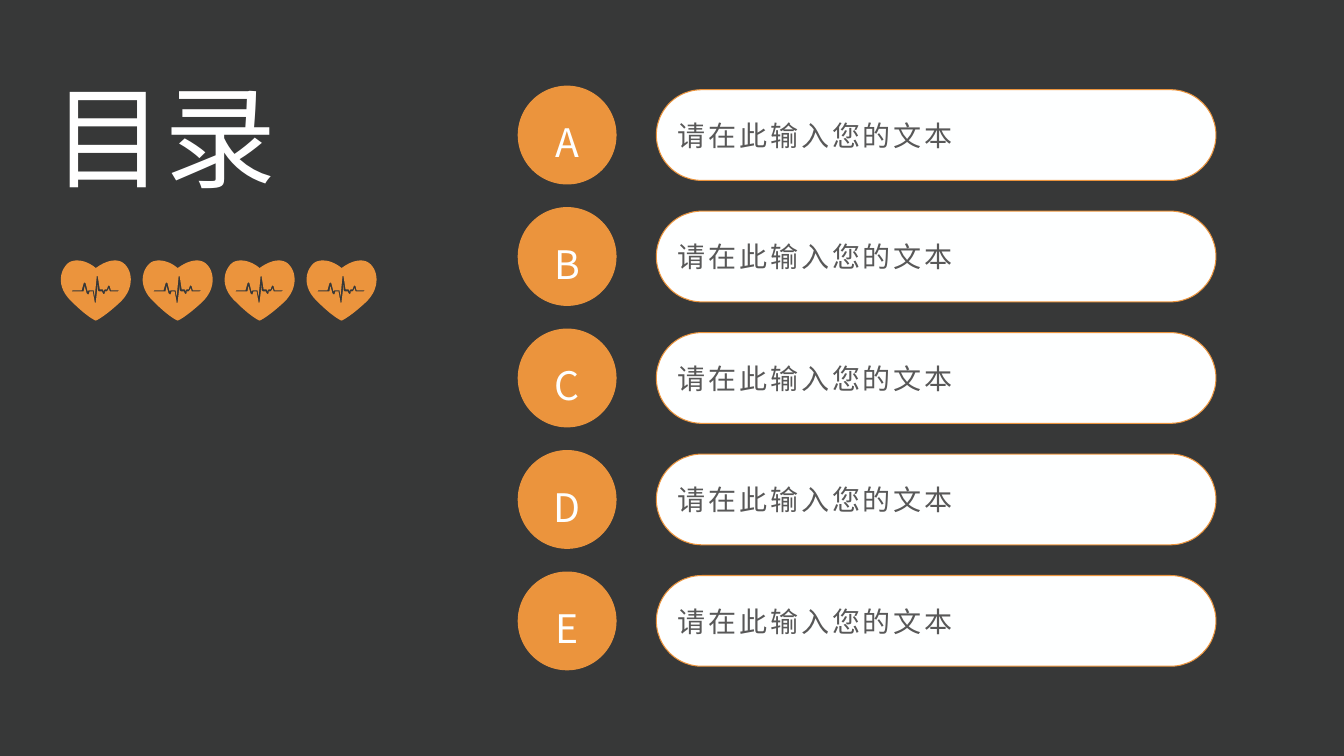
"""Contents slide: a title with a row of heartbeat icons beside five lettered entries."""
from dataclasses import dataclass

from lxml.etree import SubElement
from pptx import Presentation
from pptx.dml.color import RGBColor
from pptx.enum.shapes import MSO_SHAPE as SHAPE
from pptx.enum.text import MSO_ANCHOR as ANCHOR, MSO_AUTO_SIZE as AUTO, PP_ALIGN as ALIGN
from pptx.oxml.ns import qn
from pptx.util import Pt

TITLE = "目录"
ENTRIES = [(letter, "请在此输入您的文本") for letter in "ABCDE"]

PX = 9144
SLIDE = (1333, 750)
TITLE_BOX = (42, 61, 346, 145)
PILL = dict(x=651, y=89, w=555, h=90)
BADGE = dict(x=514, d=97)
ROW_PITCH = 120.5
HEARTS = dict(x=54, y=255, pitch=81.25, count=4)

HEART_START = (15, 5)
HEART_CURVES = [
    ((26, 0), (38, 8), (41, 11)),
    ((45, 8), (57, 0), (67, 5)),
    ((77, 11), (81, 30), (65, 45)),
    ((51, 58), (42, 63), (41, 63)),
    ((40, 63), (31, 58), (18, 45)),
    ((0, 29), (6, 11), (15, 5)),
]
PULSE = [
    (18, 34), (29, 34), (30, 29), (32, 36), (33, 37), (34, 37), (35, 34), (38, 34),
    (40, 45), (40, 46), (41, 45), (43, 28), (43, 33), (44, 34), (47, 34), (48, 36),
    (49, 37), (50, 36), (50, 34), (52, 34), (53, 33), (54, 31), (55, 34), (63, 34),
    (65, 33), (56, 33), (55, 29), (54, 28), (53, 29), (52, 32), (50, 32), (49, 33),
    (49, 34), (48, 32), (45, 32), (43, 19), (42, 19), (40, 39), (39, 33), (34, 33),
    (33, 34), (31, 26), (30, 25), (29, 26), (27, 33), (18, 33), (17, 34),
]


@dataclass(frozen=True)
class Theme:
    font: str = "Noto Sans CJK SC"
    back: RGBColor = RGBColor(0x37, 0x38, 0x38)
    accent: RGBColor = RGBColor(0xEB, 0x94, 0x3D)
    pale: RGBColor = RGBColor(0xFE, 0xFF, 0xFF)
    white: RGBColor = RGBColor(0xFF, 0xFF, 0xFF)
    grey: RGBColor = RGBColor(0x58, 0x58, 0x58)
    title: int = 80
    letter: int = 28
    entry: int = 20


THEME = Theme()


def emu(*lengths):
    return [round(v * PX) for v in lengths]


def set_attrs(obj, **values):
    for name, value in values.items():
        setattr(obj, name, value)


def write(sp, text, size, color, align, spacing=None, tracking=0, **frame):
    tf = sp.text_frame
    set_attrs(tf, word_wrap=True, auto_size=AUTO.NONE, vertical_anchor=ANCHOR.MIDDLE, **frame)
    p = tf.paragraphs[0]
    set_attrs(p, alignment=align, line_spacing=spacing)
    r = p.add_run()
    r.text = text
    set_attrs(r.font, size=Pt(size), name=THEME.font)
    r.font.color.rgb = color
    rpr = r._r.get_or_add_rPr()
    SubElement(rpr, qn("a:ea")).set("typeface", THEME.font)
    if tracking:
        rpr.set("spc", str(tracking))


def paint(sp, fill, line=None):
    sp.shadow.inherit = False
    sp.fill.solid()
    sp.fill.fore_color.rgb = fill
    if line is None:
        sp.line.fill.background()
    else:
        sp.line.color.rgb = line
        sp.line.width = Pt(0.75)


def bezier(p0, p1, p2, p3, steps=16):
    for i in range(1, steps + 1):
        t = i / steps
        u = 1 - t
        yield tuple(u**3 * a + 3 * u * u * t * b + 3 * u * t * t * c + t**3 * d
                    for a, b, c, d in zip(p0, p1, p2, p3))


def heart_outline():
    points = [HEART_START]
    for curve in HEART_CURVES:
        points += list(bezier(points[-1], *curve))
    return points


def add_heart(shapes, x, y):
    outline, pulse = [[emu(*pt) for pt in path] for path in (heart_outline(), PULSE)]
    builder = shapes.build_freeform(*outline[0])
    builder.add_line_segments(outline[1:], close=True)
    builder.move_to(*pulse[0])
    builder.add_line_segments(pulse[1:], close=True)
    paint(builder.convert_to_shape(*emu(x, y)), THEME.accent)


def add_entry(shapes, y, letter, text):
    no_inset = dict.fromkeys(("margin_left", "margin_top", "margin_right", "margin_bottom"), 0)
    pill = shapes.add_shape(SHAPE.ROUNDED_RECTANGLE, *emu(PILL["x"], y, PILL["w"], PILL["h"]))
    pill.adjustments[0] = 0.5
    paint(pill, THEME.pale, THEME.accent)
    write(pill, text, THEME.entry, THEME.grey, ALIGN.LEFT, tracking=200,
          **{**no_inset, "margin_left": emu(8)[0]})
    d = BADGE["d"]
    badge = shapes.add_shape(SHAPE.OVAL, *emu(BADGE["x"], y + (PILL["h"] - d) / 2, d, d))
    paint(badge, THEME.accent, THEME.accent)
    write(badge, letter, THEME.letter, THEME.pale, ALIGN.CENTER, spacing=1.3, **no_inset)


def main():
    prs = Presentation()
    prs.slide_width, prs.slide_height = emu(*SLIDE)
    s = prs.slides.add_slide(prs.slide_layouts[5])
    s.background.fill.solid()
    s.background.fill.fore_color.rgb = THEME.back
    title = s.shapes.title
    set_attrs(title, **dict(zip(("left", "top", "width", "height"), emu(*TITLE_BOX))))
    write(title, TITLE, THEME.title, THEME.white, ALIGN.JUSTIFY)
    for i, entry in enumerate(ENTRIES):
        add_entry(s.shapes, PILL["y"] + i * ROW_PITCH, *entry)
    for i in range(HEARTS["count"]):
        add_heart(s.shapes, HEARTS["x"] + i * HEARTS["pitch"], HEARTS["y"])
    prs.save("out.pptx")


if __name__ == "__main__":
    main()
